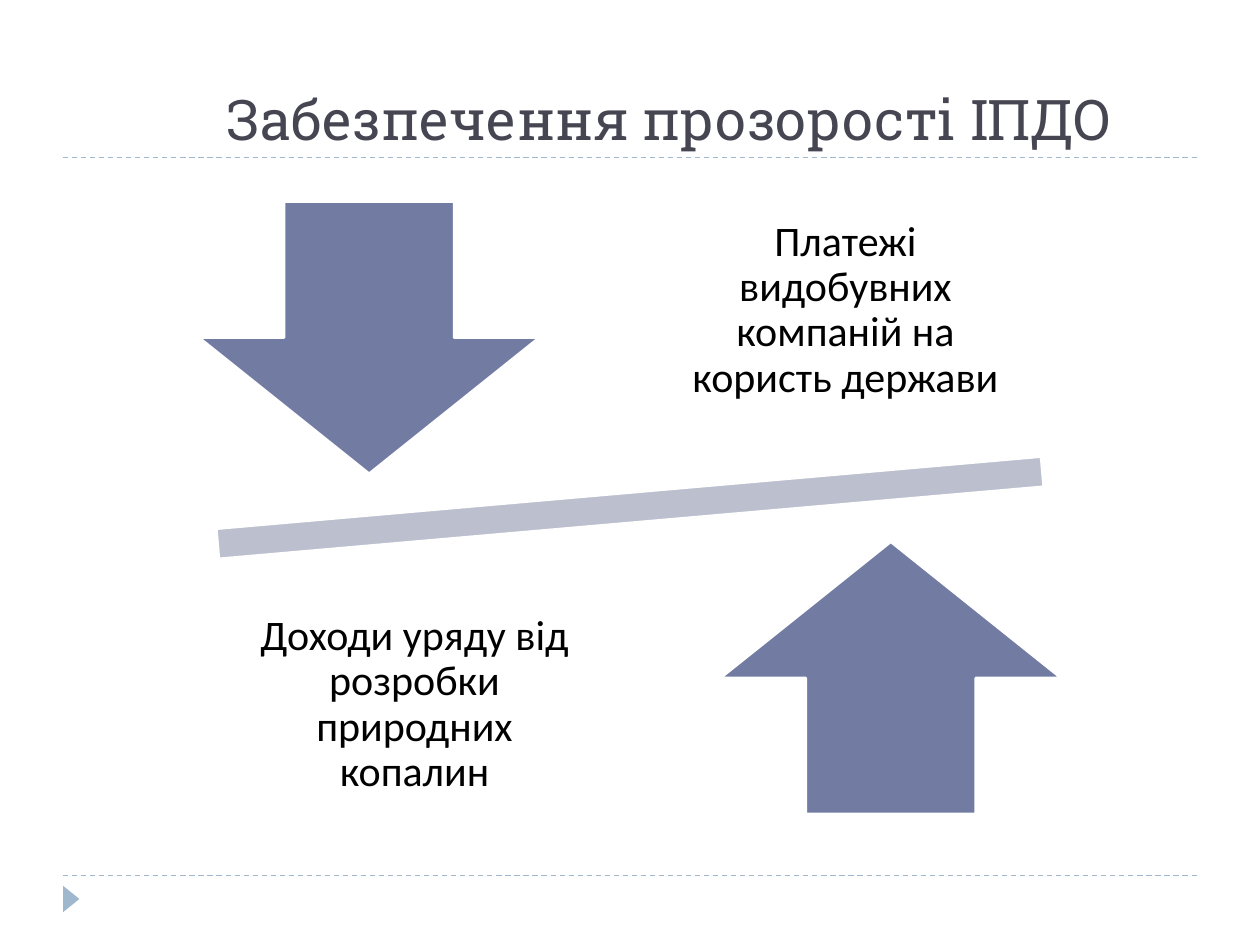
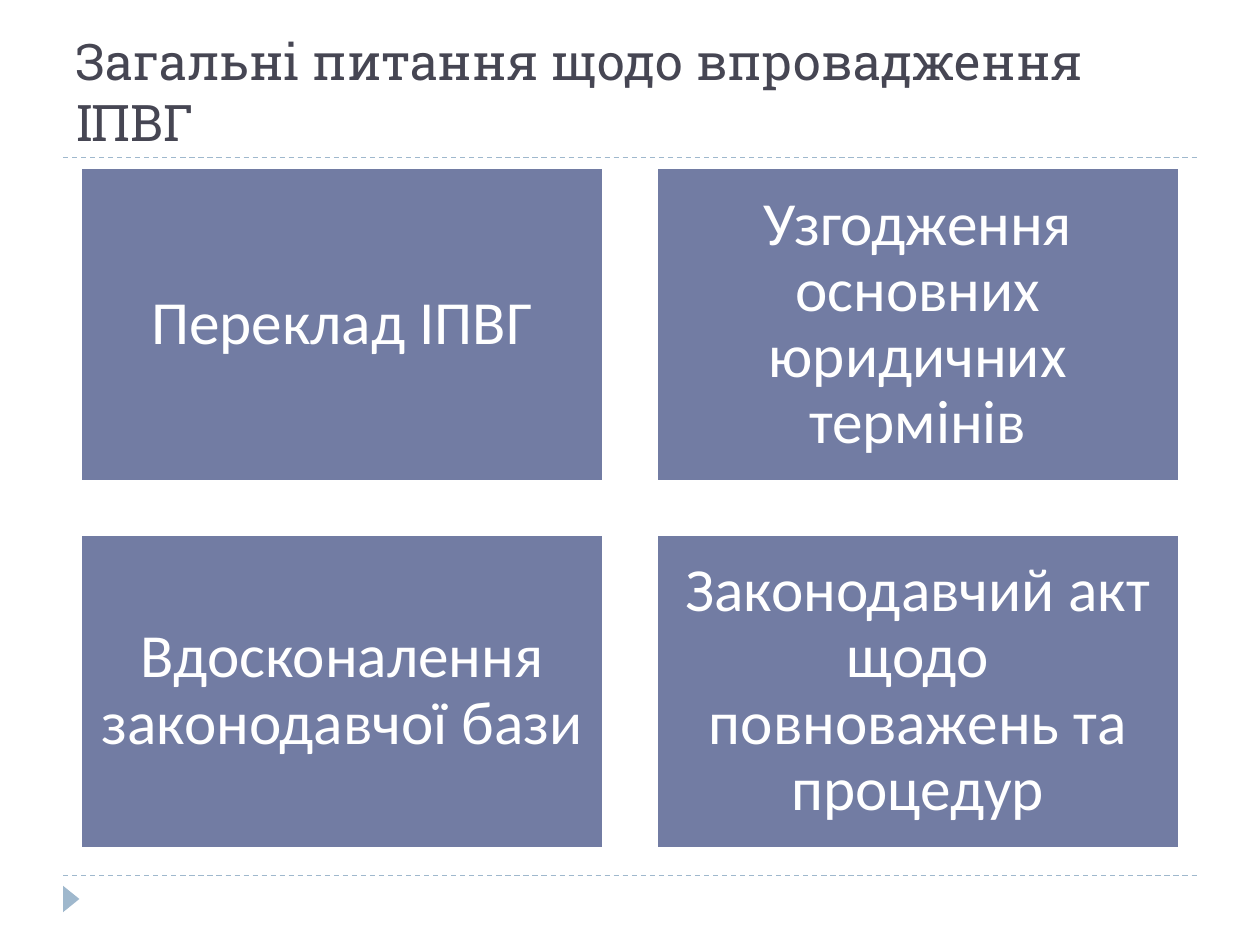
"""Build two slides on transparency and open governance in one shared style."""
import pptx
import pptx.dml.color
import pptx.enum.dml
import pptx.enum.shapes
import pptx.enum.text
import pptx.oxml.ns
import pptx.util
from lxml import etree

COLORS = {"rule": "9FB8CD", "title": "464653", "main": "727CA3",
          "bar": "BCBFCE", "white": "FFFFFF", "black": "000000"}
SHAPE = pptx.enum.shapes.MSO_SHAPE
ANCHOR = pptx.enum.text.MSO_ANCHOR
ALIGN = pptx.enum.text.PP_ALIGN
COLS, ROWS = 100, 75
MARGINS = ("margin_left", "margin_top", "margin_right", "margin_bottom")
BODY = {"alignment": ALIGN.CENTER, "line_spacing": 0.9}


def rgb(name):
    return pptx.dml.color.RGBColor.from_string(COLORS[name])


def assign(target, values):
    for name, value in values.items():
        setattr(target, name, value)


class Deck:
    def __init__(self):
        self.prs = pptx.Presentation()
        self.prs.slide_width = pptx.util.Inches(10)
        self.prs.slide_height = pptx.util.Inches(7.5)
        self.s = None

    def x(self, cols):
        return round(self.prs.slide_width * cols / COLS)

    def y(self, rows):
        return round(self.prs.slide_height * rows / ROWS)

    def box(self, left, top, width, height):
        return self.x(left), self.y(top), self.x(width), self.y(height)

    def slide(self, title, size, indent=0):
        self.s = self.prs.slides.add_slide(self.prs.slide_layouts[6])
        for row in (69.5, 12.5):
            self.rule(row)
        self.shape(SHAPE.ISOSCELES_TRIANGLE, (4.6, 70.7, 2.1, 1.3), "rule", 90, False)
        sp = self.s.shapes.add_textbox(*self.box(5, 1.7, 90, 10.8))
        self.text(sp, title, size, "title", "Roboto Slab", ANCHOR.BOTTOM,
                  {"margin_left": self.x(1 + indent)}, {"alignment": ALIGN.LEFT})

    def rule(self, row):
        sp = self.s.shapes.add_connector(pptx.enum.shapes.MSO_CONNECTOR.STRAIGHT,
                                         self.x(5), self.y(row), self.x(95), self.y(row))
        sp.line.color.rgb = rgb("rule")
        assign(sp.line, {"width": pptx.util.Pt(0.75),
                         "dash_style": pptx.enum.dml.MSO_LINE.DASH})
        etree.SubElement(sp.element.spPr, pptx.oxml.ns.qn("a:effectLst"))

    def shape(self, kind, box, fill, rotation=0, outlined=True):
        sp = self.s.shapes.add_shape(kind, *self.box(*box))
        sp.shadow.inherit = False
        sp.rotation = rotation
        sp.fill.solid()
        sp.fill.fore_color.rgb = rgb(fill)
        if outlined:
            sp.line.color.rgb = rgb("white")
            sp.line.width = pptx.util.Pt(1.5)
        else:
            sp.line.fill.background()
        return sp

    def text(self, sp, words, size, color, font, anchor, frame, para):
        tf = sp.text_frame
        assign(tf, {"word_wrap": True, "vertical_anchor": anchor, **frame})
        p = tf.paragraphs[0]
        assign(p, para)
        r = p.add_run()
        r.text = words
        assign(r.font, {"name": font, "size": pptx.util.Pt(size)})
        r.font.color.rgb = rgb(color)

    def body(self, sp, words, size, color, inset):
        self.text(sp, words, size, color, "Calibri", ANCHOR.MIDDLE,
                  dict.fromkeys(MARGINS, self.x(inset)), BODY)

    def label(self, left, top, words):
        sp = self.s.shapes.add_textbox(*self.box(left, top, 28.8, 22.7))
        self.body(sp, words, 24, "black", 1.9)

    def card(self, left, top, words):
        sp = self.shape(SHAPE.RECTANGLE, (left, top, 41.5, 24.9), "main")
        self.body(sp, words, 35, "white", 1.5)


def balance(deck):
    deck.slide("Забезпечення прозорості ІПДО", 32, indent=12)
    deck.shape(SHAPE.MATH_MINUS, (5.3, 35.2, 89.4, 10.2), "bar", 355)
    deck.shape(SHAPE.DOWN_ARROW, (15.8, 16, 27, 21.6), "main")
    deck.label(52.7, 13.3, "Платежі видобувних компаній на користь держави")
    deck.shape(SHAPE.UP_ARROW, (57.2, 43, 27, 21.6), "main")
    deck.label(18.5, 44.6, "Доходи уряду від розробки природних копалин")


def issues(deck):
    deck.slide("Загальні питання щодо впровадження ІПВГ", 28.8)
    cards = ("Переклад ІПВГ", "Узгодження основних юридичних термінів",
             "Вдосконалення законодавчої бази",
             "Законодавчий акт щодо повноважень та процедур")
    for i, words in enumerate(cards):
        row, col = divmod(i, 2)
        deck.card(6.4 + 45.7 * col, 13.3 + 29.1 * row, words)


def main():
    deck = Deck()
    balance(deck)
    issues(deck)
    deck.prs.save("out.pptx")


if __name__ == "__main__":
    main()
